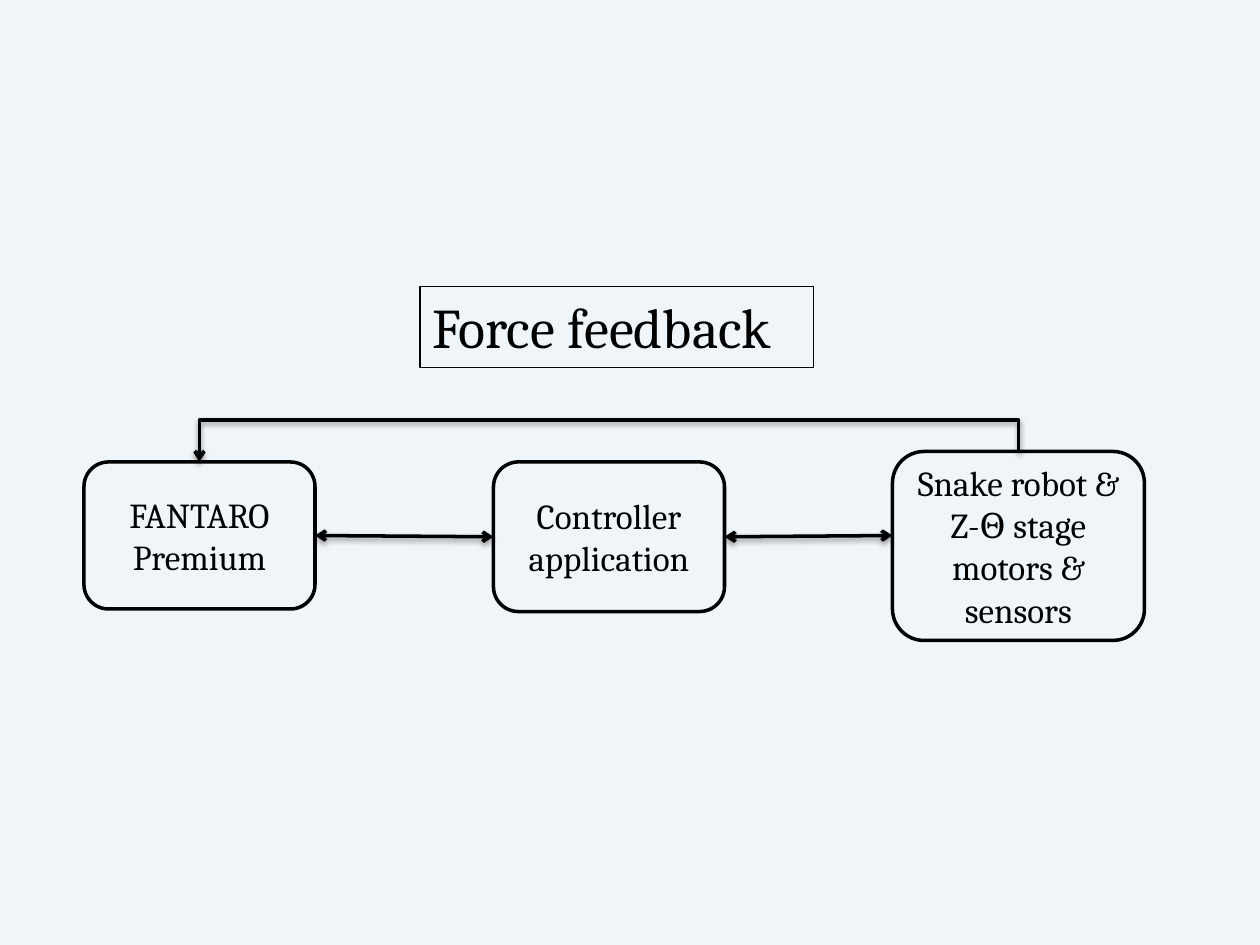
from dataclasses import dataclass
from typing import Optional

from lxml.etree import SubElement
from pptx import Presentation
from pptx.dml.color import RGBColor
from pptx.enum.shapes import MSO_CONNECTOR as Link, MSO_SHAPE as Preset
from pptx.enum.text import MSO_ANCHOR as Anchor, PP_ALIGN as Align
from pptx.oxml.ns import qn
from pptx.util import Inches, Pt

COLORS = {"ink": "000000", "background": "F0F5FA"}
FONT = "Cambria"
COLUMNS, ROWS = 120, 90  # square grid, twelve cells to the inch
TOP, LEFT, BOTTOM, RIGHT = range(4)  # connection sites of a rectangle

deck = Presentation()
deck.slide_width, deck.slide_height = Inches(10), Inches(7.5)
page = deck.slides.add_slide(deck.slide_layouts[6])


@dataclass
class Stage:
    text: str
    column: float
    row: float
    width: float
    height: float


STAGES = [
    Stage("FANTARO Premium", 8, 44, 22, 14),
    Stage("Controller application", 47, 44, 22, 14.25),
    Stage("Snake robot & Z-Θ stage motors & sensors", 85, 43, 24, 18),
]


def across(columns: float) -> int:
    return round(deck.slide_width * columns / COLUMNS)


def down(rows: float) -> int:
    return round(deck.slide_height * rows / ROWS)


def color(name: str) -> RGBColor:
    return RGBColor.from_string(COLORS[name])


def outline(item, width: float) -> None:
    item.line.color.rgb = color("ink")
    item.line.width = Pt(width)


def write(box, text: str, *, size: float, align=Align.LEFT, anchor=Anchor.TOP) -> None:
    frame = box.text_frame
    frame.word_wrap = True
    frame.vertical_anchor = anchor
    para = frame.paragraphs[0]
    para.alignment = align
    span = para.add_run()
    span.text = text
    span.font.name, span.font.size = FONT, Pt(size)
    span.font.color.rgb = color("ink")


def draw_stage(stage: Stage):
    box = page.shapes.add_shape(
        Preset.ROUNDED_RECTANGLE, across(stage.column), down(stage.row),
        across(stage.width), down(stage.height))
    box.shadow.inherit = False
    box.fill.background()
    outline(box, 2)
    write(box, stage.text, size=20, align=Align.CENTER, anchor=Anchor.MIDDLE)
    return box


def style_arrow(arrow, *, both_ends: bool) -> None:
    outline(arrow, 2)
    line = arrow.line._get_or_add_ln()
    for end in ("a:headEnd", "a:tailEnd") if both_ends else ("a:tailEnd",):
        SubElement(line, qn(end), type="arrow")
    # Soft shadow straight below the line
    effects = SubElement(arrow._element.spPr, qn("a:effectLst"))
    shadow = SubElement(effects, qn("a:outerShdw"), blurRad="40000",
                        dist="20000", dir="5400000", rotWithShape="0")
    tint = SubElement(shadow, qn("a:srgbClr"), val=COLORS["ink"])
    SubElement(tint, qn("a:alpha"), val="38000")


def draw_exchange(source, target, end_row: Optional[float] = None) -> None:
    """Two-way arrow; end_row places its end off the middle of the target's side."""
    arrow = page.shapes.add_connector(
        Link.STRAIGHT, source.left + source.width, source.top + source.height // 2,
        target.left, down(end_row or 0))
    arrow.begin_connect(source, RIGHT)
    if end_row is None:
        arrow.end_connect(target, LEFT)
    style_arrow(arrow, both_ends=True)


def draw_feedback(source, target, rise: int) -> None:
    """Elbow that leaves the source's top, rises and drops onto the target's top."""
    start_x = source.left + source.width // 2
    end_x = target.left + target.width // 2
    arrow = page.shapes.add_connector(Link.ELBOW, start_x, source.top, end_x, target.top)
    arrow.begin_connect(source, TOP)
    arrow.end_connect(target, TOP)
    # A quarter turn swaps the sides of the frame around its centre
    drop, span = target.top - source.top, start_x - end_x
    arrow.left = (start_x + end_x - drop) // 2
    arrow.top = (source.top + target.top - span) // 2
    arrow.width, arrow.height = drop, span
    frame = arrow._element.spPr.find(qn("a:xfrm"))
    for name, value in (("rot", "16200000"), ("flipH", "1"), ("flipV", "1")):
        frame.set(name, value)
    guides = arrow._element.spPr.find(qn("a:prstGeom")).get_or_add_avLst()
    SubElement(guides, qn("a:gd"), name="adj1", fmla=f"val {-round(rise / drop * 100000)}")
    style_arrow(arrow, both_ends=False)


# Background
page.background.fill.solid()
page.background.fill.fore_color.rgb = color("background")

# Stages and the arrows between them
device, controller, robot = [draw_stage(stage) for stage in STAGES]
draw_exchange(device, controller)
draw_exchange(controller, robot, end_row=51)
draw_feedback(robot, device, rise=down(3))

# Title
title = page.shapes.add_textbox(across(40), down(27.3), across(37.5), down(7.7))
outline(title, 0.75)
write(title, "Force feedback", size=32)

deck.save("out.pptx")
